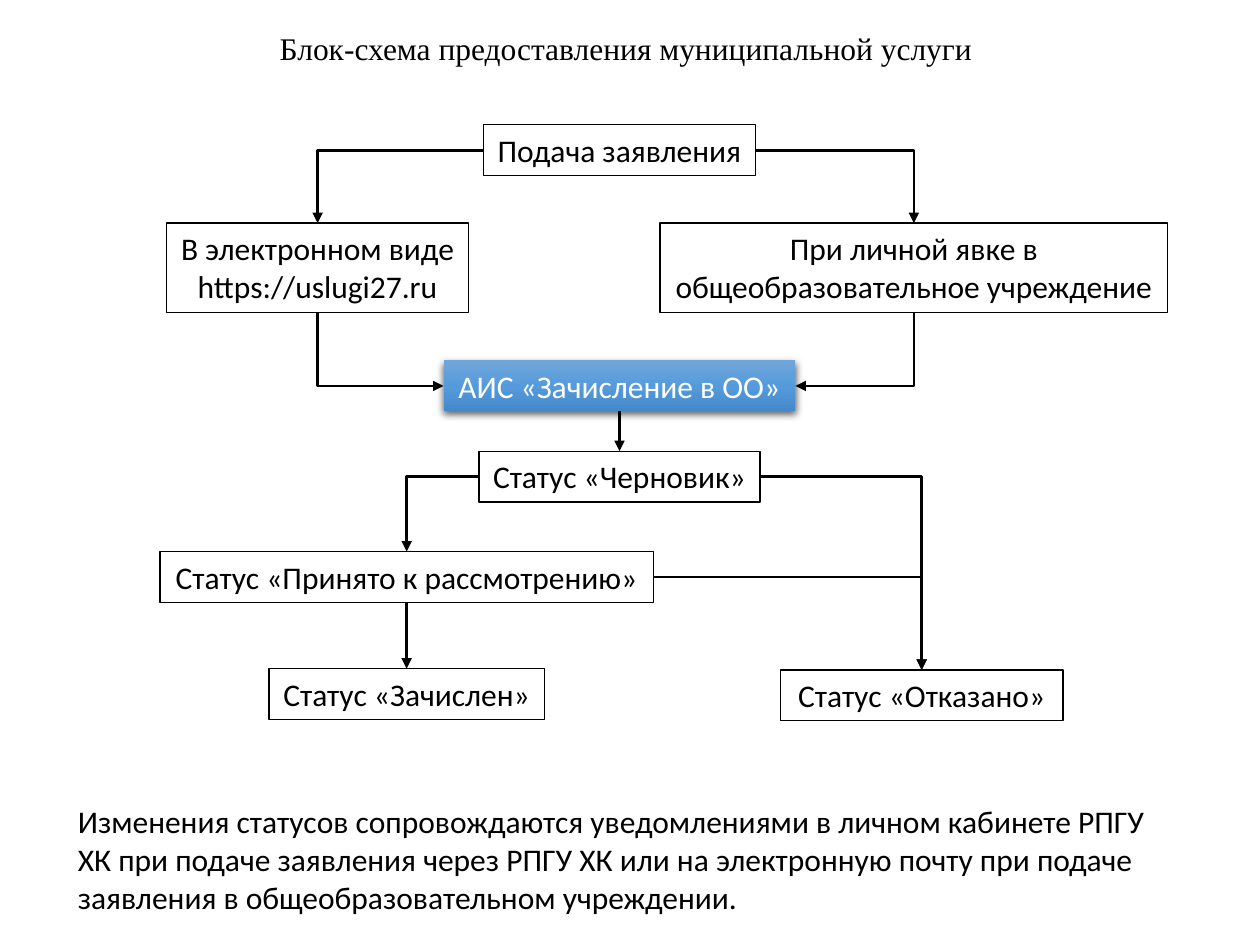
from copy import deepcopy

from lxml.etree import SubElement
from pptx import Presentation
from pptx.dml.color import RGBColor
from pptx.enum.shapes import MSO_CONNECTOR, MSO_SHAPE
from pptx.enum.text import MSO_ANCHOR, MSO_AUTO_SIZE, PP_ALIGN
from pptx.oxml.ns import qn
from pptx.util import Pt

BLACK = "000000"
WHITE = "FFFFFF"
TOP, LEFT, BOTTOM, RIGHT = range(4)
ONE_LINE = 29.1
TWO_LINES = 51.1


def color(hex_value):
    return RGBColor.from_string(hex_value)


def write(frame, text, font="Calibri", size=18, ink=BLACK,
          align=PP_ALIGN.LEFT, anchor=MSO_ANCHOR.TOP, wrap=False):
    frame.text = text
    frame.word_wrap = wrap
    frame.auto_size = MSO_AUTO_SIZE.SHAPE_TO_FIT_TEXT
    frame.vertical_anchor = anchor
    for paragraph in frame.paragraphs:
        paragraph.alignment = align
        paragraph.font.name = font
        paragraph.font.size = Pt(size)
        paragraph.font.color.rgb = color(ink)


def add_step(slide, text, center, top, width, height=ONE_LINE, ink=BLACK):
    step = slide.shapes.add_shape(
        MSO_SHAPE.RECTANGLE, Pt(center - width / 2), Pt(top), Pt(width), Pt(height))
    step.shadow.inherit = False
    step.fill.background()
    step.line.color.rgb = color(BLACK)
    step.line.width = Pt(0.75)
    write(step.text_frame, text, ink=ink, align=PP_ALIGN.CENTER)
    return step


def highlight(step, stops):
    step.line.fill.background()
    step.fill.gradient()
    step.fill.gradient_angle = 270
    properties = step._element.spPr
    stop_list = properties.find(".//" + qn("a:gsLst"))
    stop_list.append(deepcopy(stop_list[0]))
    for stop, (position, shade) in zip(step.fill.gradient_stops, stops):
        stop.position = position
        stop.color.rgb = color(shade)
    shadow = SubElement(
        properties.find(qn("a:effectLst")), qn("a:outerShdw"),
        blurRad=str(Pt(4.5)), dist=str(Pt(1.5)), dir="5400000",
        algn="ctr", rotWithShape="0")
    shade = SubElement(shadow, qn("a:srgbClr"), val=BLACK)
    SubElement(shade, qn("a:alpha"), val="63000")


def turn_vertical_first(arrow):
    start_x, start_y = arrow.begin_x, arrow.begin_y
    run, drop = arrow.end_x - start_x, arrow.end_y - start_y
    middle_x, middle_y = start_x + run // 2, start_y + drop // 2
    frame = arrow._element.spPr.find(qn("a:xfrm"))
    for flip in ("flipH", "flipV"):
        frame.attrib.pop(flip, None)
    arrow.left, arrow.top = middle_x - drop // 2, middle_y - abs(run) // 2
    arrow.width, arrow.height = drop, abs(run)
    if run > 0:
        frame.set("flipH", "1")
    frame.set("rot", "16200000" if run > 0 else "5400000")


def add_arrow(slide, source, source_side, target, target_side):
    straight = (source_side, target_side) == (BOTTOM, TOP)
    kind = MSO_CONNECTOR.STRAIGHT if straight else MSO_CONNECTOR.ELBOW
    arrow = slide.shapes.add_connector(kind, 0, 0, 0, 0)
    arrow.begin_connect(source, source_side)
    arrow.end_connect(target, target_side)
    arrow.line.color.rgb = color(BLACK)
    arrow.line.width = Pt(1.5)
    properties = arrow._element.spPr
    SubElement(properties.find(qn("a:ln")), qn("a:tailEnd"), type="triangle")
    SubElement(properties, qn("a:effectLst"))
    if not straight:
        properties.find(qn("a:prstGeom")).set("prst", "bentConnector2")
        if source_side == BOTTOM:
            turn_vertical_first(arrow)


def main():
    deck = Presentation()
    deck.slide_width, deck.slide_height = Pt(720), Pt(540)
    slide = deck.slides.add_slide(deck.slide_layouts[5])

    title = slide.shapes.title
    title.left, title.top, title.width, title.height = Pt(152.6), Pt(13), Pt(414.7), Pt(29.1)
    write(title.text_frame, "Блок-схема предоставления муниципальной услуги",
          font="Times New Roman")

    application = add_step(slide, "Подача заявления", 354, 71.3, 155.5)
    online = add_step(slide, "В электронном виде\nhttps://uslugi27.ru",
                      181.5, 127.5, 172.4, TWO_LINES)
    in_person = add_step(slide, "При личной явке в\nобщеобразовательное учреждение",
                         522.2, 127.5, 290, TWO_LINES)
    registry = add_step(slide, "АИС «Зачисление в ОО»", 354, 206, 201, ink=WHITE)
    highlight(registry, [(0, "71A6DB"), (0.5, "559BDB"), (1, "448ACA")])
    draft = add_step(slide, "Статус «Черновик»", 354, 257.8, 160.6)
    accepted = add_step(slide, "Статус «Принято к рассмотрению»", 232.4, 315.2, 281.8)
    enrolled = add_step(slide, "Статус «Зачислен»", 232.4, 382.1, 157.2)
    refused = add_step(slide, "Статус «Отказано»", 526.7, 382.8, 161.6)

    for route in (
        (registry, BOTTOM, draft, TOP),
        (draft, RIGHT, refused, TOP),
        (application, LEFT, online, TOP),
        (application, RIGHT, in_person, TOP),
        (online, BOTTOM, registry, LEFT),
        (in_person, BOTTOM, registry, RIGHT),
        (draft, LEFT, accepted, TOP),
        (accepted, BOTTOM, enrolled, TOP),
        (accepted, RIGHT, refused, TOP),
    ):
        add_arrow(slide, *route)

    notice = slide.shapes.add_textbox(Pt(37.4), Pt(455), Pt(639.4), Pt(72.7))
    write(notice.text_frame,
          "Изменения статусов сопровождаются уведомлениями в личном кабинете РПГУ ХК "
          "при подаче заявления через РПГУ ХК или на электронную почту при подаче "
          "заявления в общеобразовательном учреждении.", wrap=True)

    deck.save("out.pptx")


if __name__ == "__main__":
    main()
